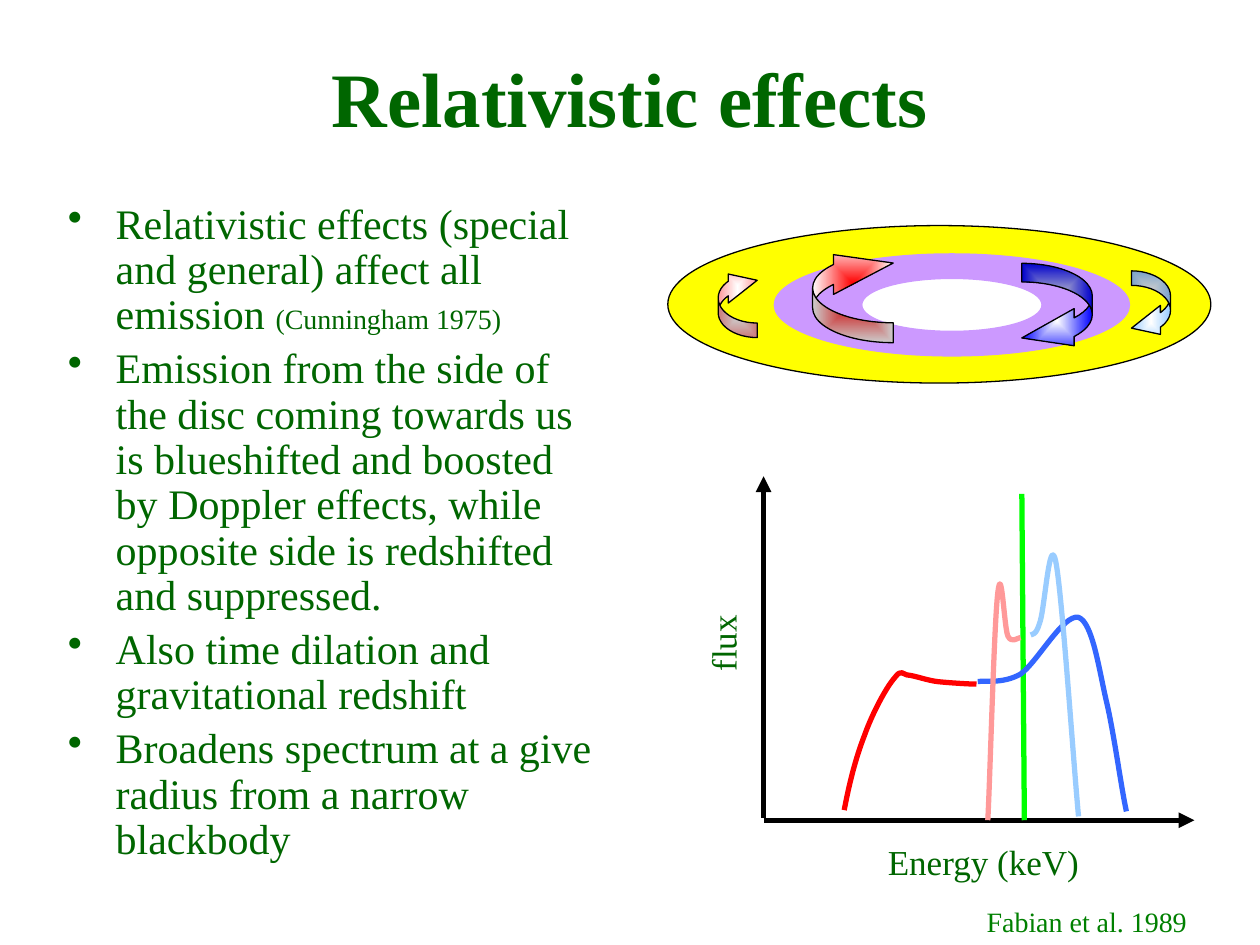
from pptx import Presentation
from pptx.dml.color import RGBColor
from pptx.enum.shapes import MSO_CONNECTOR, MSO_SHAPE
from pptx.enum.text import MSO_ANCHOR, PP_ALIGN
from pptx.oxml import parse_xml
from pptx.oxml.ns import nsdecls, qn
from pptx.util import Inches, Pt
from lxml.etree import SubElement

DARK_GREEN = RGBColor(0x00, 0x66, 0x00)
CREDIT_GREEN = RGBColor(0x00, 0x80, 0x00)
LIME = RGBColor(0x00, 0xFF, 0x00)
BLACK = RGBColor(0x00, 0x00, 0x00)
WHITE = RGBColor(0xFF, 0xFF, 0xFF)
YELLOW = RGBColor(0xFF, 0xFF, 0x00)
LILAC = RGBColor(0xCC, 0x99, 0xFF)
RED = RGBColor(0xFF, 0x00, 0x00)
PINK = RGBColor(0xFF, 0x99, 0x99)
BLUE = RGBColor(0x00, 0x00, 0xFF)
MID_BLUE = RGBColor(0x33, 0x66, 0xFF)
PALE_BLUE = RGBColor(0x99, 0xCC, 0xFF)

COLUMNS, ROWS = 100, 75
CIRCLE = 0.5523  # Bezier handle length for a quarter circle


class Slide:
    """Style and current slide; lengths are grid columns and rows."""

    font = "Times New Roman"

    def __init__(self, deck):
        self.page = deck.slides.add_slide(deck.slide_layouts[6])
        self.shapes = self.page.shapes
        self.column = deck.slide_width / COLUMNS
        self.row = deck.slide_height / ROWS

    def grid(self, *lengths):
        """Turn alternating column and row lengths into slide units."""
        return [round(length * (self.row if i % 2 else self.column))
                for i, length in enumerate(lengths)]

    def outline(self, shape, color, width):
        shape.line.color.rgb = color
        shape.line.width = Pt(width)

    def span(self, para, words, size, color=DARK_GREEN, bold=False):
        run = para.add_run()
        run.text = words
        run.font.color.rgb = color
        values = {"name": self.font, "size": Pt(size), "bold": bold}
        for name, value in values.items():
            setattr(run.font, name, value)

    def frame(self, place, anchor=MSO_ANCHOR.TOP, rotation=0):
        box = self.shapes.add_textbox(*self.grid(*place))
        box.rotation = rotation
        box.text_frame.word_wrap = True
        box.text_frame.vertical_anchor = anchor
        return box.text_frame

    def label(self, words, place, size, color=DARK_GREEN, bold=False, **layout):
        para = self.frame(place, **layout).paragraphs[0]
        para.alignment = PP_ALIGN.CENTER
        self.span(para, words, size, color, bold)

    def bullets(self, items, place):
        frame = self.frame(place)
        for index, spans in enumerate(items):
            para = frame.add_paragraph() if index else frame.paragraphs[0]
            para.line_spacing = 0.9
            para.space_before = Pt(5)
            props = para._p.get_or_add_pPr()
            props.set("marL", str(Inches(0.38)))
            props.set("indent", str(-Inches(0.38)))
            SubElement(props, qn("a:buChar")).set("char", "•")
            for words, size in spans:
                self.span(para, words, size)

    def line(self, start, end, color, arrow=False):
        line = self.shapes.add_connector(
            MSO_CONNECTOR.STRAIGHT, *self.grid(*start, *end))
        self.outline(line, color, 3)
        if arrow:
            SubElement(line.line._get_or_add_ln(), qn("a:tailEnd")).set("type", "triangle")
        SubElement(line._element.spPr, qn("a:effectLst"))

    def bezier(self, contours, close=False):
        """Each contour is a start point, then two handles and an end per piece."""
        contours = [[self.grid(*point) for point in points] for points in contours]
        builder = self.shapes.build_freeform(*contours[0][0], scale=1.0)
        for index, (start, *points) in enumerate(contours):
            if index:
                builder.move_to(*start)
            builder.add_line_segments(points, close=close)
        shape = builder.convert_to_shape()
        shape.shadow.inherit = False
        # Merge every three straight pieces into one cubic piece
        pieces = list(shape._element.iter(qn("a:lnTo")))
        for first, second, third in zip(pieces[::3], pieces[1::3], pieces[2::3]):
            first.tag = qn("a:cubicBezTo")
            for piece in (second, third):
                first.append(piece[0])
                piece.getparent().remove(piece)
        return shape

    def curve(self, points, color):
        shape = self.bezier([points])
        shape.fill.background()
        self.outline(shape, color, 3)

    def ring(self, center, outer, inner, color, edge=None):
        quarter = [(-1, 0), (-1, -CIRCLE), (-CIRCLE, -1), (0, -1),
                   (CIRCLE, -1), (1, -CIRCLE), (1, 0), (1, CIRCLE),
                   (CIRCLE, 1), (0, 1), (-CIRCLE, 1), (-1, CIRCLE), (-1, 0)]
        contours = [[(center[0] + x * radii[0], center[1] + turn * y * radii[1])
                     for x, y in quarter]
                    for radii, turn in ((outer, 1), (inner, -1))]
        shape = self.bezier(contours, close=True)
        shape.fill.solid()
        shape.fill.fore_color.rgb = color
        if edge is None:
            shape.line.fill.background()
        else:
            self.outline(shape, edge, 0.75)

    def orbit_arrow(self, place, adjust, middle, rim, flip=False):
        shape = self.shapes.add_shape(MSO_SHAPE.CURVED_LEFT_ARROW, *self.grid(*place))
        shape.shadow.inherit = False
        for index, value in enumerate(adjust):
            shape.adjustments[index] = value
        props = shape._element.spPr
        if flip:
            for name in ("flipH", "flipV"):
                props.xfrm.set(name, "1")
        self.outline(shape, BLACK, 0.75)
        shape.fill.background()
        gradient = parse_xml(
            f'<a:gradFill {nsdecls("a")} rotWithShape="1"><a:gsLst>'
            f'<a:gs pos="0"><a:srgbClr val="{middle}"/></a:gs>'
            f'<a:gs pos="100000"><a:srgbClr val="{rim}"/></a:gs></a:gsLst>'
            '<a:path path="rect"><a:fillToRect l="50000" t="50000" r="50000" b="50000"/>'
            '</a:path></a:gradFill>')
        props.replace(props.find(qn("a:noFill")), gradient)


def main():
    deck = Presentation()
    deck.slide_width, deck.slide_height = Inches(10), Inches(7.5)
    slide = Slide(deck)

    # Title and credit
    slide.label("Relativistic effects", (7.5, 1.4, 85, 12.5), 44, bold=True,
                anchor=MSO_ANCHOR.MIDDLE)
    slide.label("Fabian et al. 1989", (71.9, 71.3, 28.7, 3.7), 16, CREDIT_GREEN)

    # Outer disc and its slow orbit arrows
    slide.ring((74.55, 24.15), (21.55, 6.25), (10.75, 3.15), YELLOW, BLACK)
    small = (0.372, 0.744, 0.742)
    slide.orbit_arrow((89.8, 21.5, 3.1, 5.7), small, WHITE, PALE_BLUE)
    slide.orbit_arrow((57, 21.1, 3.1, 5.7), small, WHITE, PINK, flip=True)

    # Inner disc and its fast orbit arrows
    slide.ring((75.55, 24.2), (14.15, 4.1), (7.1, 2.05), LILAC)
    slide.orbit_arrow((81.1, 20.9, 5.6, 7.4), (0.264, 0.527, 0.742), WHITE, BLUE)
    slide.orbit_arrow((64.5, 19.3, 6.4, 7.9), (0.247, 0.493, 0.742), RED, WHITE, flip=True)

    # Spectrum axes and rest-frame line
    slide.line((60.6, 64.9), (60.6, 37.8), BLACK, arrow=True)
    slide.line((60.6, 65.1), (94.8, 65.1), BLACK, arrow=True)
    slide.line((81.1, 39.2), (81.3, 65.1), LIME)
    slide.label("Energy (keV)", (65.2, 66.2, 25.7, 4.3), 20)
    slide.label("flux", (44.5, 48.9, 25.7, 4.3), 20, rotation=270)

    # Line profiles: inner disc, then outer disc
    profiles = [
        (MID_BLUE, [(77.6, 54.1), (78.1, 54), (79.6, 54.3), (81, 53.5),
                    (82.3, 52.6), (84.4, 48.7), (85.6, 49), (86.7, 49.4),
                    (87.2, 53), (87.8, 55.6), (88.4, 58.1), (89, 62.6), (89.4, 64.4)]),
        (RED, [(77.5, 54.3), (77, 54.3), (75.3, 54.2), (74.4, 54.1),
               (73.6, 54), (72.8, 53.7), (72.2, 53.6), (71.6, 53.6),
               (71.6, 53), (71, 53.8), (70.3, 54.6), (69.2, 56.7), (68.6, 58.4),
               (67.9, 60.2), (67.4, 62.2), (67, 64.3)]),
        (PINK, [(81, 50.6), (80.8, 50.6), (80.3, 51.1), (80, 50.5), (79.7, 49.9),
                (79.5, 44.5), (79.2, 47), (78.9, 49.4), (78.6, 61.3), (78.4, 65.1)]),
        (PALE_BLUE, [(81.8, 50.4), (81.9, 50.3), (82.2, 50.5), (82.5, 49.5),
                     (82.9, 48.6), (83.3, 42.1), (83.8, 44.6), (84.3, 47.1),
                     (85.2, 60.6), (85.6, 64.8)]),
    ]
    for color, points in profiles:
        slide.curve(points, color)

    # Explanation
    slide.bullets([
        [("Relativistic effects (special and general) affect all emission ", 24),
         ("(Cunningham 1975)", 16)],
        [("Emission from the side of the disc coming towards us is blueshifted and "
          "boosted by Doppler effects, while opposite side is redshifted and "
          "suppressed.", 24)],
        [("Also time dilation and gravitational redshift", 24)],
        [("Broadens spectrum at a give radius from a narrow blackbody", 24)],
    ], (4.4, 15.6, 44.5, 56.5))

    deck.save("out.pptx")


if __name__ == "__main__":
    main()
